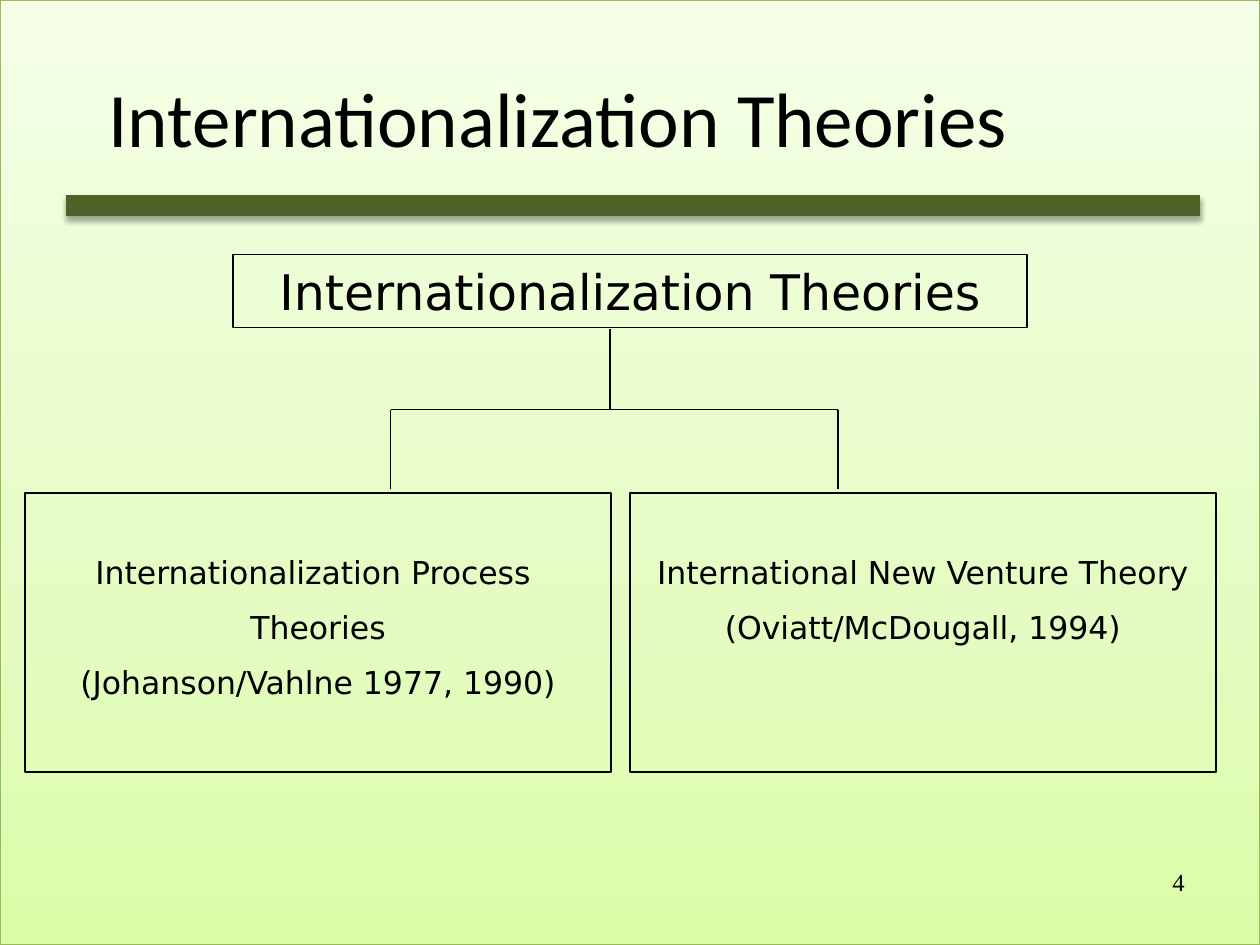
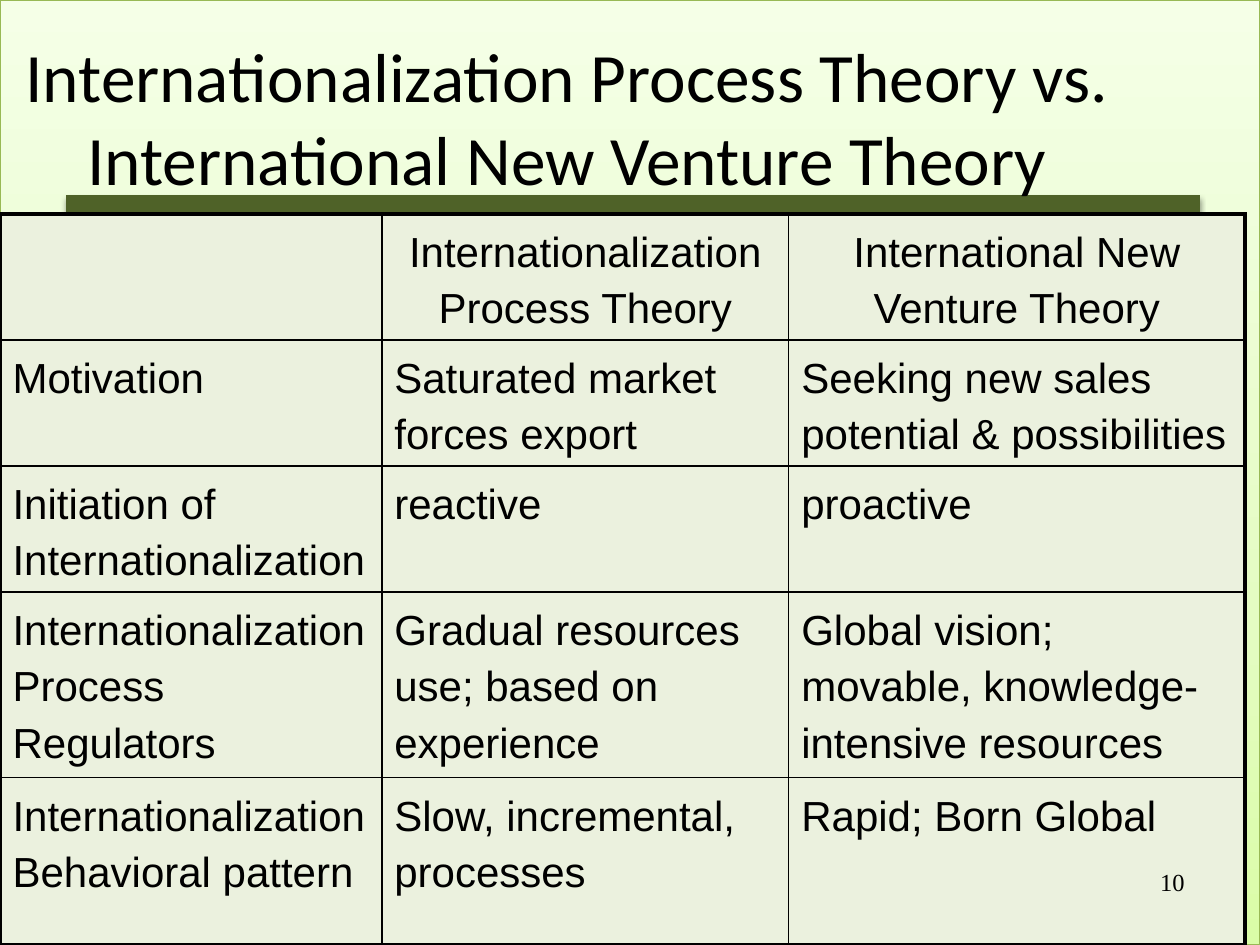
"""Build two slides that compare theories of internationalization."""
import copy
from dataclasses import dataclass
from typing import Any, NamedTuple

import lxml.etree
import pptx
import pptx.dml.color
import pptx.enum.shapes
import pptx.enum.text
import pptx.oxml
import pptx.oxml.ns
import pptx.util

Inches = pptx.util.Inches
Pt = pptx.util.Pt
Align = pptx.enum.text.PP_ALIGN
Anchor = pptx.enum.text.MSO_ANCHOR
Preset = pptx.enum.shapes.MSO_SHAPE
qn = pptx.oxml.ns.qn


@dataclass(frozen=True)
class Theme:
    ink: str = "000000"
    band: str = "4F6228"
    frame: str = "98B955"
    cell: str = "EBF1DE"
    gradient: tuple = ((0, "DAFDA7"), (0.35, "E4FCC2"), (1, "F5FFE7"))
    title_font: str = "Calibri"
    diagram_font: str = "DejaVu Sans"
    table_font: str = "Arial"
    number_font: str = "Times New Roman"
    title_size: float = 44
    long_title_size: float = 39.6
    root_size: float = 28
    branch_size: float = 18
    table_size: float = 24
    number_size: float = 14
    thin: float = 1
    thick: float = 2.25


THEME = Theme()


class Area(NamedTuple):
    left: float
    top: float
    width: float
    height: float

    def lengths(self) -> list:
        return [Inches(value) for value in self]


class TheoryBox(NamedTuple):
    area: Area
    lines: tuple
    size: float
    anchor: Any
    margin_top: float


class Branch(NamedTuple):
    start: tuple
    end: tuple


SLIDE = Area(0, 0, 10, 7.5)
BAND = Area(-1.1, 1.28, 12.25, 0.71)
TITLE = Area(0, 0.3, 9, 1.25)
NUMBER = Area(7.17, 6.83, 2.33, 0.52)

BRANCH_TOP, BRANCH_WIDTH, BRANCH_HEIGHT = 3.91, 4.65, 2.22
ROOT_BOX = TheoryBox(Area(1.85, 2.02, 6.3, 0.58), ("Internationalization Theories",),
                     THEME.root_size, Anchor.MIDDLE, 0.05)
BRANCH_BOXES = [
    TheoryBox(Area(left, BRANCH_TOP, BRANCH_WIDTH, BRANCH_HEIGHT), lines,
              THEME.branch_size, Anchor.TOP, 0.48)
    for left, lines in (
        (0.2, ("Internationalization Process ", "Theories", "(Johanson/Vahlne 1977, 1990)")),
        (5, ("International New Venture Theory", "(Oviatt/McDougall, 1994)")),
    )
]
TRUNK_X, FORK_Y, DROP_XS = 4.84, 3.25, (3.1, 6.65)
BRANCHES = [
    Branch((TRUNK_X, 2.61), (TRUNK_X, FORK_Y)),
    Branch((DROP_XS[0], FORK_Y), (DROP_XS[1], FORK_Y)),
    *(Branch((x, FORK_Y), (x, 3.88)) for x in DROP_XS),
]

TABLE_LEFT, TABLE_TOP = 0, 1.7
COLUMN_WIDTHS = (3.03, 3.23, 3.62)
ROW_HEIGHTS = (1, 1, 1, 1.47, 1.33)
COMPARISON = (
    ("", "Internationalization Process Theory", "International New Venture Theory"),
    ("Motivation", "Saturated market forces export",
     "Seeking new sales potential & possibilities"),
    ("Initiation of Internationalization", "reactive", "proactive"),
    ("Internationalization Process Regulators", "Gradual resources use; based on experience",
     "Global vision; movable, knowledge-intensive resources"),
    ("Internationalization\nBehavioral pattern", "Slow, incremental, processes",
     "Rapid; Born Global"),
)


def rgb(value: str) -> pptx.dml.color.RGBColor:
    return pptx.dml.color.RGBColor.from_string(value)


def apply_format(target: Any, values: dict) -> None:
    for name, value in values.items():
        setattr(target, name, value)


def write_text(frame: Any, lines: tuple, font: str, size: float, paragraph_format: dict,
               gap: float = 0) -> None:
    for index, line in enumerate(lines):
        paragraph = frame.paragraphs[0] if index == 0 else frame.add_paragraph()
        run = paragraph.add_run()
        run.text = line
        apply_format(paragraph, paragraph_format)
        if index:
            paragraph.space_before = Pt(gap)
        for text_font in (paragraph.font, run.font):
            apply_format(text_font, {"name": font, "size": Pt(size)})
            text_font.color.rgb = rgb(THEME.ink)


def set_line(line: Any, color: str, width: float) -> None:
    line.color.rgb = rgb(color)
    line.width = Pt(width)


def add_background(slide: Any) -> None:
    shape = slide.shapes.add_shape(Preset.RECTANGLE, *SLIDE.lengths())
    shape.shadow.inherit = False
    set_line(shape.line, THEME.frame, 0.75)
    shape.fill.gradient()
    shape.fill.gradient_angle = 90
    stop_list = shape.element.spPr.find(qn("a:gradFill")).find(qn("a:gsLst"))
    stop_list.append(copy.deepcopy(stop_list[0]))
    for stop, (position, color) in zip(shape.fill.gradient_stops, THEME.gradient):
        stop.position = position
        stop.color.rgb = rgb(color)


def add_band(slide: Any) -> None:
    shape = slide.shapes.add_shape(Preset.MATH_MINUS, *BAND.lengths())
    shape.shadow.inherit = False
    shape.fill.solid()
    shape.fill.fore_color.rgb = rgb(THEME.band)
    shape.line.fill.background()
    effects = shape.element.spPr.find(qn("a:effectLst"))
    shadow = lxml.etree.SubElement(effects, qn("a:outerShdw"), {
        "blurRad": str(Pt(3.1)), "dist": str(Pt(1.8)), "dir": "5400000", "rotWithShape": "0"})
    color = lxml.etree.SubElement(shadow, qn("a:srgbClr"), {"val": THEME.ink})
    lxml.etree.SubElement(color, qn("a:alpha"), {"val": "35000"})


def add_titled_slide(presentation: Any, title_text: str, size: float) -> Any:
    slide = presentation.slides.add_slide(presentation.slide_layouts[5])
    add_background(slide)
    add_band(slide)
    title = slide.shapes.title
    apply_format(title, dict(zip(("left", "top", "width", "height"), TITLE.lengths())))
    apply_format(title.text_frame, {
        "word_wrap": True, "vertical_anchor": Anchor.MIDDLE,
        "auto_size": pptx.enum.text.MSO_AUTO_SIZE.NONE})
    write_text(title.text_frame, (title_text,), THEME.title_font, size,
               {"alignment": Align.CENTER})
    title.element.getparent().append(title.element)
    return slide


def add_number(slide: Any, number: int) -> None:
    frame = slide.shapes.add_textbox(*NUMBER.lengths()).text_frame
    frame.word_wrap = True
    write_text(frame, (str(number),), THEME.number_font, THEME.number_size,
               {"alignment": Align.RIGHT})


def add_theory_box(slide: Any, box: TheoryBox) -> None:
    shape = slide.shapes.add_shape(Preset.RECTANGLE, *box.area.lengths())
    shape.shadow.inherit = False
    shape.fill.background()
    set_line(shape.line, THEME.ink, THEME.thin)
    apply_format(shape.text_frame, {
        "word_wrap": False, "vertical_anchor": box.anchor,
        "margin_top": Inches(box.margin_top)})
    write_text(shape.text_frame, box.lines, THEME.diagram_font, box.size,
               {"alignment": Align.CENTER}, gap=9.7)


def add_branch(slide: Any, branch: Branch) -> None:
    points = [Inches(value) for value in (*branch.start, *branch.end)]
    connector = slide.shapes.add_connector(pptx.enum.shapes.MSO_CONNECTOR.STRAIGHT, *points)
    set_line(connector.line, THEME.ink, THEME.thin)
    lxml.etree.SubElement(connector.element.spPr, qn("a:effectLst"))


def set_borders(cell: Any, outer_sides: dict) -> None:
    properties = cell._tc.get_or_add_tcPr()
    for index, (side, is_outer) in enumerate(outer_sides.items()):
        width = Pt(THEME.thick if is_outer else THEME.thin)
        border = pptx.oxml.parse_xml(
            f'<a:{side} {pptx.oxml.ns.nsdecls("a")} w="{width}"><a:solidFill>'
            f'<a:srgbClr val="{THEME.ink}"/></a:solidFill></a:{side}>')
        properties.insert(index, border)


def add_comparison(slide: Any) -> None:
    area = Area(TABLE_LEFT, TABLE_TOP, sum(COLUMN_WIDTHS), sum(ROW_HEIGHTS))
    last_row, last_column = len(ROW_HEIGHTS) - 1, len(COLUMN_WIDTHS) - 1
    table = slide.shapes.add_table(last_row + 1, last_column + 1, *area.lengths()).table
    apply_format(table, {"first_row": False, "horz_banding": False})
    for column, width in zip(table.columns, COLUMN_WIDTHS):
        column.width = Inches(width)
    for row, height in zip(table.rows, ROW_HEIGHTS):
        row.height = Inches(height)
    for row_index, texts in enumerate(COMPARISON):
        for column_index, text in enumerate(texts):
            cell = table.cell(row_index, column_index)
            cell.fill.solid()
            cell.fill.fore_color.rgb = rgb(THEME.cell)
            set_borders(cell, {
                "lnL": column_index == 0, "lnR": column_index == last_column,
                "lnT": row_index == 0, "lnB": row_index == last_row})
            if text:
                alignment = Align.LEFT if row_index else Align.CENTER
                write_text(cell.text_frame, tuple(text.split("\n")), THEME.table_font,
                           THEME.table_size, {"alignment": alignment, "line_spacing": 1.2})


def build_theories_slide(presentation: Any) -> None:
    slide = add_titled_slide(presentation, "Internationalization Theories ", THEME.title_size)
    for box in (ROOT_BOX, *BRANCH_BOXES):
        add_theory_box(slide, box)
    for branch in BRANCHES:
        add_branch(slide, branch)
    add_number(slide, 4)


def build_comparison_slide(presentation: Any) -> None:
    slide = add_titled_slide(
        presentation,
        "Internationalization Process Theory vs. International New Venture Theory",
        THEME.long_title_size)
    add_comparison(slide)
    add_number(slide, 10)


def main() -> None:
    presentation = pptx.Presentation()
    apply_format(presentation, {
        "slide_width": Inches(SLIDE.width), "slide_height": Inches(SLIDE.height)})
    build_theories_slide(presentation)
    build_comparison_slide(presentation)
    presentation.save("out.pptx")


if __name__ == "__main__":
    main()
